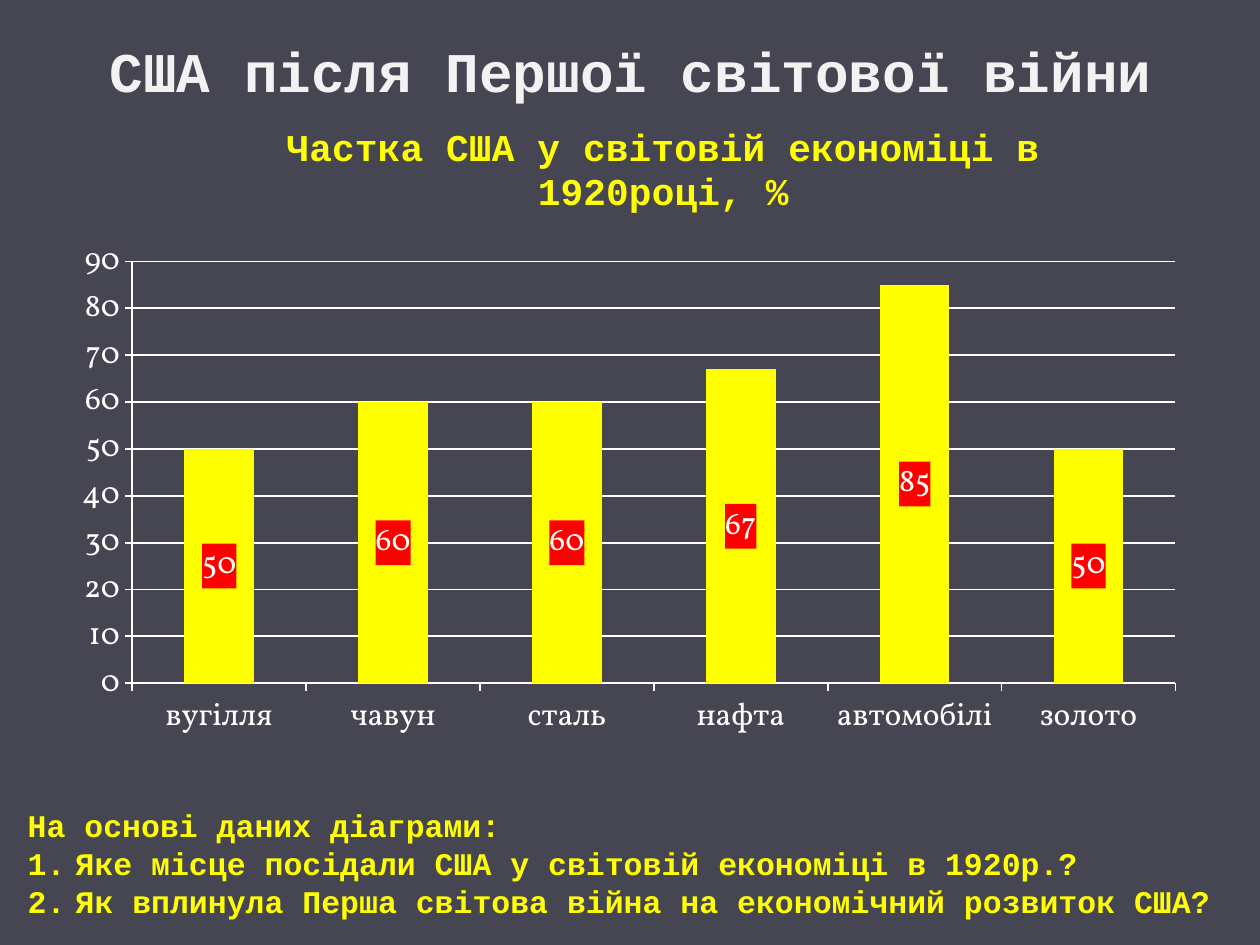
from dataclasses import dataclass

from lxml import etree
from pptx import Presentation
from pptx.chart.data import CategoryChartData
from pptx.dml.color import RGBColor
from pptx.enum.chart import XL_CHART_TYPE, XL_LABEL_POSITION, XL_TICK_MARK
from pptx.enum.text import MSO_ANCHOR, MSO_AUTO_SIZE, PP_ALIGN
from pptx.oxml import parse_xml
from pptx.oxml.ns import nsdecls, qn
from pptx.util import Inches, Pt

STACKED = XL_CHART_TYPE.COLUMN_STACKED
LABEL_CENTER = XL_LABEL_POSITION.CENTER
TICK_OUT = XL_TICK_MARK.OUTSIDE
MIDDLE, TOP = MSO_ANCHOR.MIDDLE, MSO_ANCHOR.TOP
CENTER, LEFT = PP_ALIGN.CENTER, PP_ALIGN.LEFT
GROW = MSO_AUTO_SIZE.SHAPE_TO_FIT_TEXT

TITLE = "США після Першої світової війни"
CHART_TITLE = "Частка США у світовій економіці в 1920році, %"
SHARES = {
    "вугілля": 50,
    "чавун": 60,
    "сталь": 60,
    "нафта": 67,
    "автомобілі": 85,
    "золото": 50,
}
PROMPT = "На основі даних діаграми:"
QUESTIONS = [
    "Яке місце посідали США у світовій економіці в 1920р.?",
    "Як вплинула Перша світова війна на економічний розвиток США?",
]

TITLE_AREA = (0.51, 0.13, 9, 0.85)
CHART_AREA = (0.51, 0.84, 9, 5.15)
QUESTION_AREA = (0.12, 6.35, 9.76, 1.01)
PLOT_LAYOUT = {"x": 0.06, "y": 0.24, "w": 0.92, "h": 0.65}
CHART_TITLE_LAYOUT = {"x": 0.19, "y": 0.02}


@dataclass(frozen=True)
class Theme:
    background: str = "464653"
    heading: str = "F2F2F2"
    accent: str = "FFFF00"
    chart_text: str = "FFFFFF"
    label_fill: str = "FF0000"
    text_font: str = "Courier New"
    chart_font: str = "Vollkorn"
    title_size: float = 32
    chart_title_size: float = 21.6
    body_size: float = 18


THEME = Theme()


def style_font(font, name, size, color, bold):
    font.name, font.size, font.bold = name, Pt(size), bold
    font.color.rgb = RGBColor.from_string(color)


def place(box, area):
    box.left, box.top, box.width, box.height = map(Inches, area)


def style_line(line):
    line.color.rgb = RGBColor.from_string(THEME.chart_text)
    line.width = Pt(1)


def manual_layout(parent, position, inner=False):
    layout = parent.find(qn("c:layout"))
    if layout is None:
        layout = parse_xml(f"<c:layout {nsdecls('c')}/>")
        text = parent.find(qn("c:tx"))
        parent.insert(0 if text is None else 1, layout)
    manual = etree.SubElement(layout, qn("c:manualLayout"))
    settings = [("layoutTarget", "inner")] if inner else []
    settings += [(f"{axis}Mode", "edge") for axis in ("x", "y")]
    settings += position.items()
    for tag, value in settings:
        etree.SubElement(manual, qn(f"c:{tag}")).set("val", str(value))


def add_title(page):
    box = page.shapes.title
    place(box, TITLE_AREA)
    box.text_frame.text = TITLE
    box.text_frame.vertical_anchor = MIDDLE
    para = box.text_frame.paragraphs[0]
    para.alignment = CENTER
    style_font(para.runs[0].font, THEME.text_font, THEME.title_size, THEME.heading, True)


def add_share_chart(page):
    data = CategoryChartData()
    data.categories = list(SHARES)
    data.add_series("Series 1", list(SHARES.values()))
    chart = page.shapes.add_chart(STACKED, *map(Inches, CHART_AREA), data).chart
    style_font(chart.font, THEME.chart_font, THEME.body_size, THEME.chart_text, False)
    chart.has_legend = False

    title = chart.chart_title
    title.text_frame.text = CHART_TITLE
    span = title.text_frame.paragraphs[0].runs[0]
    style_font(span.font, THEME.text_font, THEME.chart_title_size, THEME.accent, True)
    title.include_in_layout = False

    value_axis = chart.value_axis
    value_axis.minimum_scale, value_axis.maximum_scale = 0, 90
    value_axis.major_unit = 10
    value_axis.has_major_gridlines = True
    style_line(value_axis.major_gridlines.format.line)
    for axis in (chart.category_axis, value_axis):
        axis.major_tick_mark = TICK_OUT
        style_line(axis.format.line)

    plot = chart.plots[0]
    plot.gap_width, plot.overlap = 150, 100
    plot.vary_by_categories = False
    series = plot.series[0]
    series.format.fill.solid()
    series.format.fill.fore_color.rgb = RGBColor.from_string(THEME.accent)
    labels = series.data_labels
    labels.show_value = True
    labels.position = LABEL_CENTER
    style_font(labels.font, THEME.chart_font, THEME.body_size, THEME.chart_text, False)
    label_fill = parse_xml(
        f'<c:spPr {nsdecls("c", "a")}><a:solidFill>'
        f'<a:srgbClr val="{THEME.label_fill}"/></a:solidFill></c:spPr>'
    )
    labels._element.find(qn("c:txPr")).addprevious(label_fill)

    chart_node = chart._chartSpace.find(qn("c:chart"))
    manual_layout(chart_node.find(qn("c:title")), CHART_TITLE_LAYOUT)
    manual_layout(chart_node.find(qn("c:plotArea")), PLOT_LAYOUT, inner=True)


def add_questions(page):
    box = page.placeholders[1]
    place(box, QUESTION_AREA)
    frame = box.text_frame
    frame.text = "\n".join([PROMPT, *QUESTIONS])
    frame.vertical_anchor = TOP
    frame.auto_size = GROW
    for index, para in enumerate(frame.paragraphs):
        para.alignment = LEFT
        para.space_before = Pt(0)
        style_font(para.runs[0].font, THEME.text_font, THEME.body_size, THEME.accent, True)
        indent = Inches(0.38) if index else 0
        properties = para._p.get_or_add_pPr()
        properties.set("marL", str(indent))
        properties.set("indent", str(-indent))
        if index:
            bullet = etree.SubElement(properties, qn("a:buFont"))
            bullet.set("typeface", "+mj-lt")
            bullet = etree.SubElement(properties, qn("a:buAutoNum"))
            bullet.set("type", "arabicPeriod")
        else:
            etree.SubElement(properties, qn("a:buNone"))


def main():
    deck = Presentation()
    deck.slide_width, deck.slide_height = Inches(10), Inches(7.5)
    page = deck.slides.add_slide(deck.slide_layouts[1])
    page.background.fill.solid()
    page.background.fill.fore_color.rgb = RGBColor.from_string(THEME.background)
    add_title(page)
    add_share_chart(page)
    add_questions(page)
    deck.save("out.pptx")


if __name__ == "__main__":
    main()
